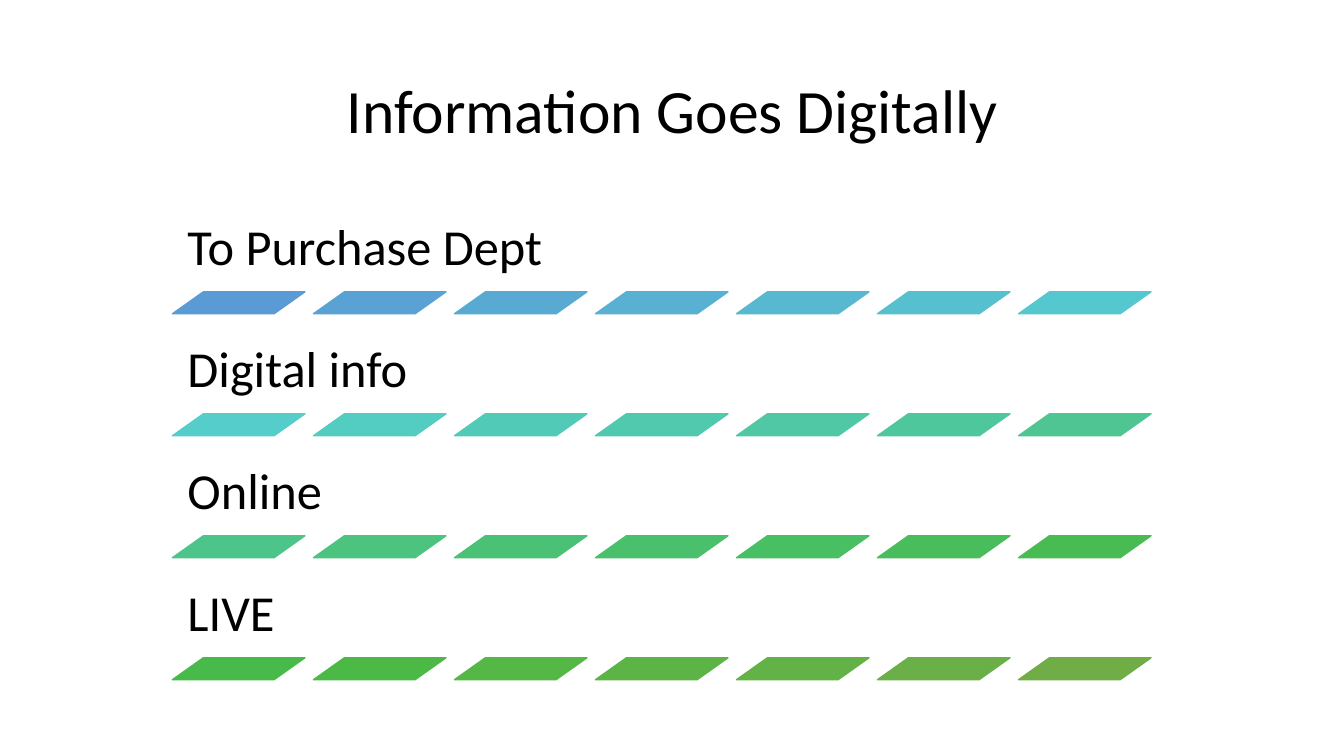
from colorsys import hls_to_rgb, rgb_to_hls
from dataclasses import dataclass

from pptx import Presentation
from pptx.dml.color import RGBColor
from pptx.enum.shapes import MSO_SHAPE
from pptx.enum.text import MSO_ANCHOR, MSO_AUTO_SIZE, PP_ALIGN
from pptx.slide import Slide
from pptx.text.text import TextFrame
from pptx.util import Inches, Pt

PARALLELOGRAM = MSO_SHAPE.PARALLELOGRAM
MIDDLE, BOTTOM = MSO_ANCHOR.MIDDLE, MSO_ANCHOR.BOTTOM
CENTER, LEFT = PP_ALIGN.CENTER, PP_ALIGN.LEFT

COLORS = {"text": "000000", "first_tile": "5B9BD5", "last_tile": "70AD47"}
FONT = "Calibri"

# Grid: one row per stage, one column per tile
GRID_LEFT, GRID_TOP = Inches(1.71), Inches(2)
TILES_PER_STAGE = 7
COLUMN = Inches(9.79) / TILES_PER_STAGE
ROW = Inches(1.21)
LABEL_COLUMNS, LABEL_ROWS = 7.09, 0.74
TILE_COLUMNS, TILE_ROWS = 0.94, 0.18
TILE_SLANT = 1.41
LABEL_INSET = Inches(0.15)


@dataclass(frozen=True)
class Stage:
    label: str
    row: int


STAGES = [Stage(label, row) for row, label in enumerate(
    ["To Purchase Dept", "Digital info", "Online", "LIVE"])]


def blend(share: float) -> RGBColor:
    """Colour at a share of the way from the first tile to the last, by hue."""
    first, last = (
        rgb_to_hls(*(channel / 255 for channel in RGBColor.from_string(COLORS[key])))
        for key in ("first_tile", "last_tile"))
    mixed = (a + (b - a) * share for a, b in zip(first, last))
    return RGBColor(*(round(channel * 255) for channel in hls_to_rgb(*mixed)))


def write(frame: TextFrame, wording: str, size: int, align: PP_ALIGN,
          anchor: MSO_ANCHOR) -> None:
    frame.text = wording
    frame.word_wrap = True
    frame.auto_size = MSO_AUTO_SIZE.NONE
    frame.vertical_anchor = anchor
    paragraph = frame.paragraphs[0]
    paragraph.alignment = align
    paragraph.line_spacing = 0.9
    paragraph.font.name = FONT
    paragraph.font.size = Pt(size)
    paragraph.font.color.rgb = RGBColor.from_string(COLORS["text"])


def add_title(slide: Slide, wording: str) -> None:
    title = slide.shapes.title
    title.left, title.top = Inches(0.92), Inches(0.4)
    title.width, title.height = Inches(11.5), Inches(1.45)
    write(title.text_frame, wording, 44, CENTER, MIDDLE)


def add_label(slide: Slide, stage: Stage) -> None:
    label = slide.shapes.add_textbox(
        GRID_LEFT, round(GRID_TOP + stage.row * ROW),
        round(LABEL_COLUMNS * COLUMN), round(LABEL_ROWS * ROW))
    frame = label.text_frame
    frame.margin_left = frame.margin_right = LABEL_INSET
    frame.margin_top = frame.margin_bottom = LABEL_INSET
    write(frame, stage.label, 36, LEFT, BOTTOM)


def add_tile(slide: Slide, stage: Stage, column: int) -> None:
    tile = slide.shapes.add_shape(
        PARALLELOGRAM,
        round(GRID_LEFT + column * COLUMN),
        round(GRID_TOP + (stage.row + LABEL_ROWS) * ROW),
        round(TILE_COLUMNS * COLUMN), round(TILE_ROWS * ROW))
    tile.adjustments[0] = TILE_SLANT
    tile.shadow.inherit = False
    position = stage.row * TILES_PER_STAGE + column
    color = blend(position / (len(STAGES) * TILES_PER_STAGE - 1))
    tile.fill.solid()
    tile.fill.fore_color.rgb = color
    tile.line.color.rgb = color
    tile.line.width = Pt(1)


def main() -> None:
    deck = Presentation()
    deck.slide_width, deck.slide_height = Inches(13.33), Inches(7.5)
    title_only = deck.slide_layouts.get_by_name("Title Only")
    slide = deck.slides.add_slide(title_only)

    add_title(slide, "Information Goes Digitally")

    # Each stage: its label above a strip of tiles
    for stage in STAGES:
        add_label(slide, stage)
        for column in range(TILES_PER_STAGE):
            add_tile(slide, stage, column)

    deck.save("out.pptx")


if __name__ == "__main__":
    main()
